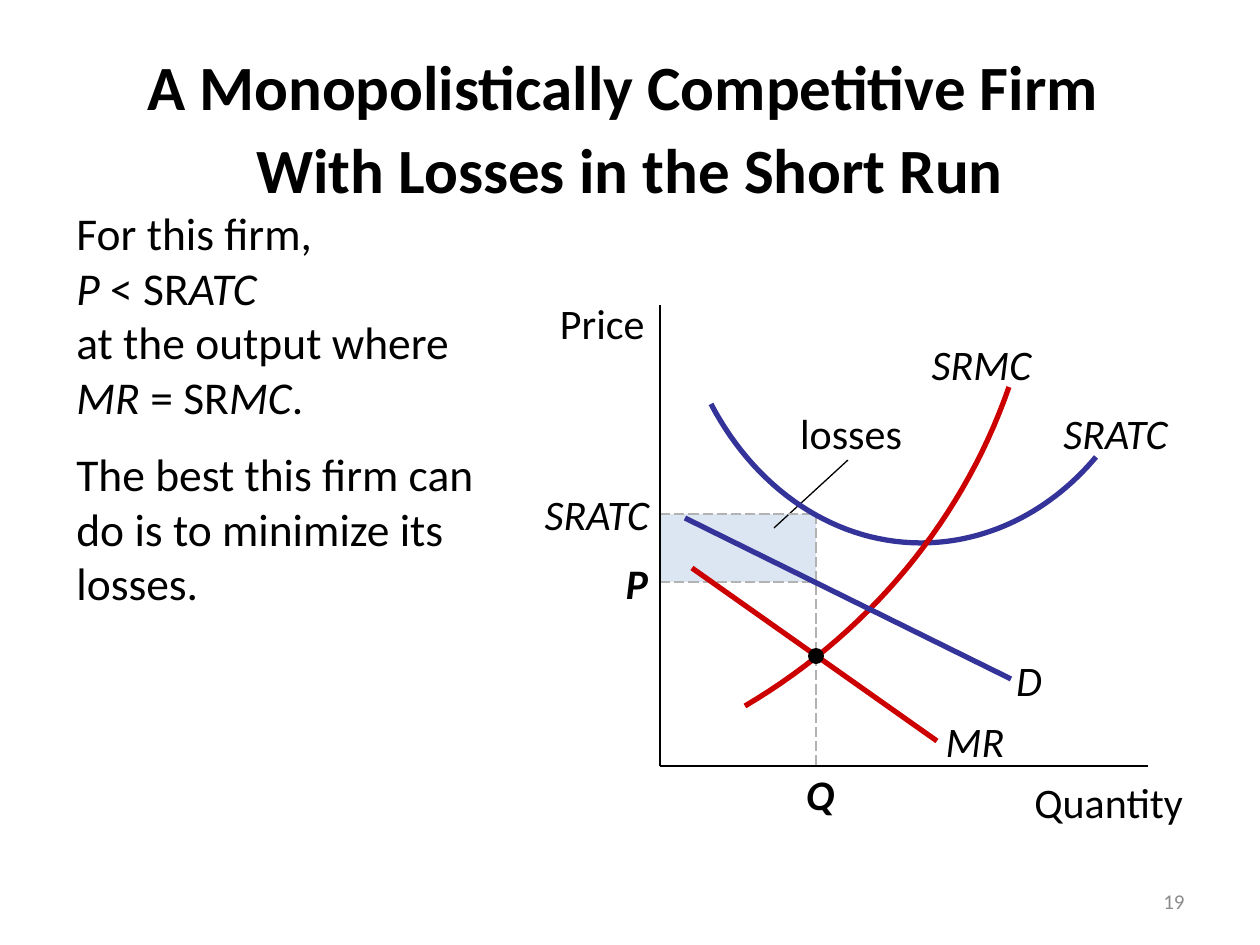
"""Build the slide on a monopolistically competitive firm with short-run losses."""
from lxml.etree import SubElement
from pptx import Presentation
from pptx.dml.color import RGBColor
from pptx.enum.dml import MSO_LINE
from pptx.enum.shapes import MSO_CONNECTOR, MSO_SHAPE
from pptx.enum.text import MSO_ANCHOR, PP_ALIGN
from pptx.oxml.ns import qn
from pptx.util import Emu, Pt

BLACK = RGBColor(0x00, 0x00, 0x00)
GRAY = RGBColor(0x8C, 0x8C, 0x8C)
DASH = RGBColor(0xB2, 0xB2, 0xB2)
BLUE = RGBColor(0x33, 0x33, 0x99)
RED = RGBColor(0xCC, 0x00, 0x00)
PALE = RGBColor(0xDC, 0xE6, 0xF2)
LEFT, CENTER, RIGHT = PP_ALIGN.LEFT, PP_ALIGN.CENTER, PP_ALIGN.RIGHT
FONT = "Calibri"
EMU_PER_PX = 914400 / 126

AXIS_X, AXIS_Y, QTY_X, ATC_Y, PRICE_Y = 660, 766, 816, 514, 582

TITLE = [[("A Monopolistically Competitive Firm \nWith Losses in the Short Run", False)]]
BODY = [
    [("For this firm, \n", False), ("P", True), (" < SR", False), ("ATC \n", True),
     ("at the output where \n", False), ("MR", True), (" = SR", False), ("MC", True),
     (".", False)],
    [("The best this firm can do is to minimize its losses.", False)],
]
GUIDES = [
    (AXIS_X, ATC_Y, QTY_X, ATC_Y),
    (QTY_X, ATC_Y, QTY_X, AXIS_Y),
    (AXIS_X, PRICE_Y, QTY_X, PRICE_Y),
]
AXES = [(AXIS_X, 305, AXIS_X, AXIS_Y), (AXIS_X, AXIS_Y, 1148, AXIS_Y)]
LEADER = (774, 528, 848, 460)
DEMAND = (685, 518, 1011, 679)
REVENUE = (692, 568, 937, 741)
ATC_CURVE = [(1096, 457), (1050, 512), (987, 543), (921, 543),
             (835, 543), (756, 490), (711, 404)]
MC_CURVE = [(745, 706), (869, 633), (963, 520), (1009, 387)]
LABELS = [
    ("losses", (771, 401, 160, 63), dict(align=CENTER, inset=True)),
    ("Price", (442, 291, 215, 63), dict(align=RIGHT, inset=True)),
    ("Quantity", (1014, 777, 169, 50), dict(align=RIGHT)),
    ("SRATC", (1058, 408, 115, 50), dict(align=CENTER, italic=True)),
    ("SRATC", (519, 489, 130, 50), dict(align=RIGHT, italic=True)),
    ("SRMC", (900, 339, 163, 50), dict(align=CENTER, italic=True)),
    ("D", (999, 655, 60, 50), dict(align=CENTER, italic=True)),
    ("MR", (934, 716, 82, 50), dict(align=CENTER, italic=True)),
    ("P", (620, 558, 28, 50), dict(align=RIGHT, bold=True, italic=True)),
    ("Q", (784, 762, 72, 63), dict(align=CENTER, bold=True, italic=True, inset=True)),
]


def px(n):
    return Emu(round(n * EMU_PER_PX))


def add_text(s, text, box, size=24, color=BLACK, align=LEFT, bold=False, italic=False,
             inset=False, anchor=MSO_ANCHOR.TOP, spacing=None, before=0):
    tf = s.shapes.add_textbox(*map(px, box)).text_frame
    tf.word_wrap = True
    tf.vertical_anchor = anchor
    if not inset:
        tf.margin_left = tf.margin_right = tf.margin_top = tf.margin_bottom = 0
    paras = [[(text, italic)]] if isinstance(text, str) else text
    for i, runs in enumerate(paras):
        p = tf.add_paragraph() if i else tf.paragraphs[0]
        p.alignment = align
        p.line_spacing = spacing
        p.space_before = Pt(before if i else 0)
        for words, slanted in runs:
            for j, part in enumerate(words.split("\n")):
                if j:
                    p.add_line_break()
                if part:
                    r = p.add_run()
                    r.text = part
                    f = r.font
                    f.name, f.size, f.bold, f.italic = FONT, Pt(size), bold, slanted
                    f.color.rgb = color


def add_line(s, ends, color=BLACK, width=0.75, dash=None):
    sp = s.shapes.add_connector(MSO_CONNECTOR.STRAIGHT, *map(px, ends))
    sp.line.color.rgb = color
    sp.line.width = Pt(width)
    if dash:
        sp.line.dash_style = dash
    SubElement(sp._element.spPr, qn("a:effectLst"))


def add_shape(s, kind, box, color):
    sp = s.shapes.add_shape(kind, *map(px, box))
    sp.shadow.inherit = False
    sp.fill.solid()
    sp.fill.fore_color.rgb = color
    sp.line.fill.background()


def bezier(pts, t):
    weights = ((1 - t) ** 3, 3 * t * (1 - t) ** 2, 3 * t * t * (1 - t), t ** 3)
    return tuple(px(sum(w * pt[k] for w, pt in zip(weights, pts))) for k in (0, 1))


def add_curve(s, controls, color, steps=30):
    points = [bezier(controls[i:i + 4], n / steps)
              for i in range(0, len(controls) - 1, 3) for n in range(1, steps + 1)]
    fb = s.shapes.build_freeform(*map(px, controls[0]))
    fb.add_line_segments(points, close=False)
    sp = fb.convert_to_shape()
    sp.shadow.inherit = False
    sp.fill.background()
    sp.line.color.rgb = color
    sp.line.width = Pt(3)


def main():
    prs = Presentation()
    prs.slide_width, prs.slide_height = px(1260), px(945)
    s = prs.slides.add_slide(prs.slide_layouts[6])
    add_shape(s, MSO_SHAPE.RECTANGLE,
              (AXIS_X, ATC_Y, QTY_X - AXIS_X, PRICE_Y - ATC_Y), PALE)
    add_line(s, LEADER)
    for ends in GUIDES:
        add_line(s, ends, DASH, dash=MSO_LINE.LONG_DASH)
    for ends in AXES:
        add_line(s, ends)
    add_text(s, TITLE, (63, 35, 1134, 176), size=36, align=CENTER, bold=True,
             inset=True, anchor=MSO_ANCHOR.MIDDLE, spacing=1.1)
    add_text(s, BODY, (64, 199, 430, 626), size=26, inset=True, before=13)
    add_curve(s, ATC_CURVE, BLUE)
    add_curve(s, MC_CURVE, RED)
    add_line(s, DEMAND, BLUE, 3)
    add_line(s, REVENUE, RED, 3)
    for text, box, style in LABELS:
        add_text(s, text, box, **style)
    add_shape(s, MSO_SHAPE.OVAL, (QTY_X - 8, 648, 16, 16), BLACK)
    add_text(s, "19", (903, 876, 294, 50), size=12, color=GRAY, align=RIGHT,
             inset=True, anchor=MSO_ANCHOR.MIDDLE)
    prs.save("out.pptx")


if __name__ == "__main__":
    main()
